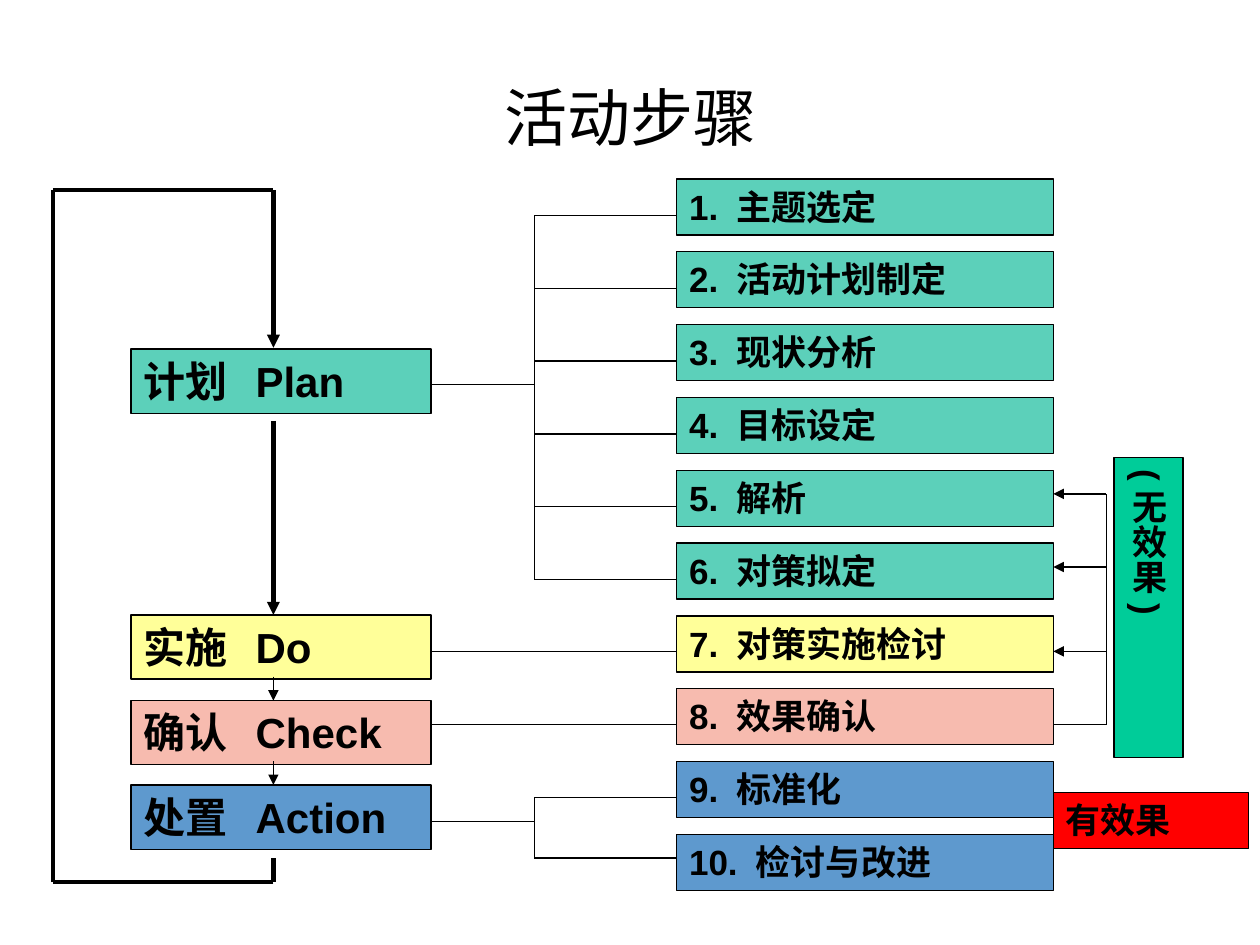
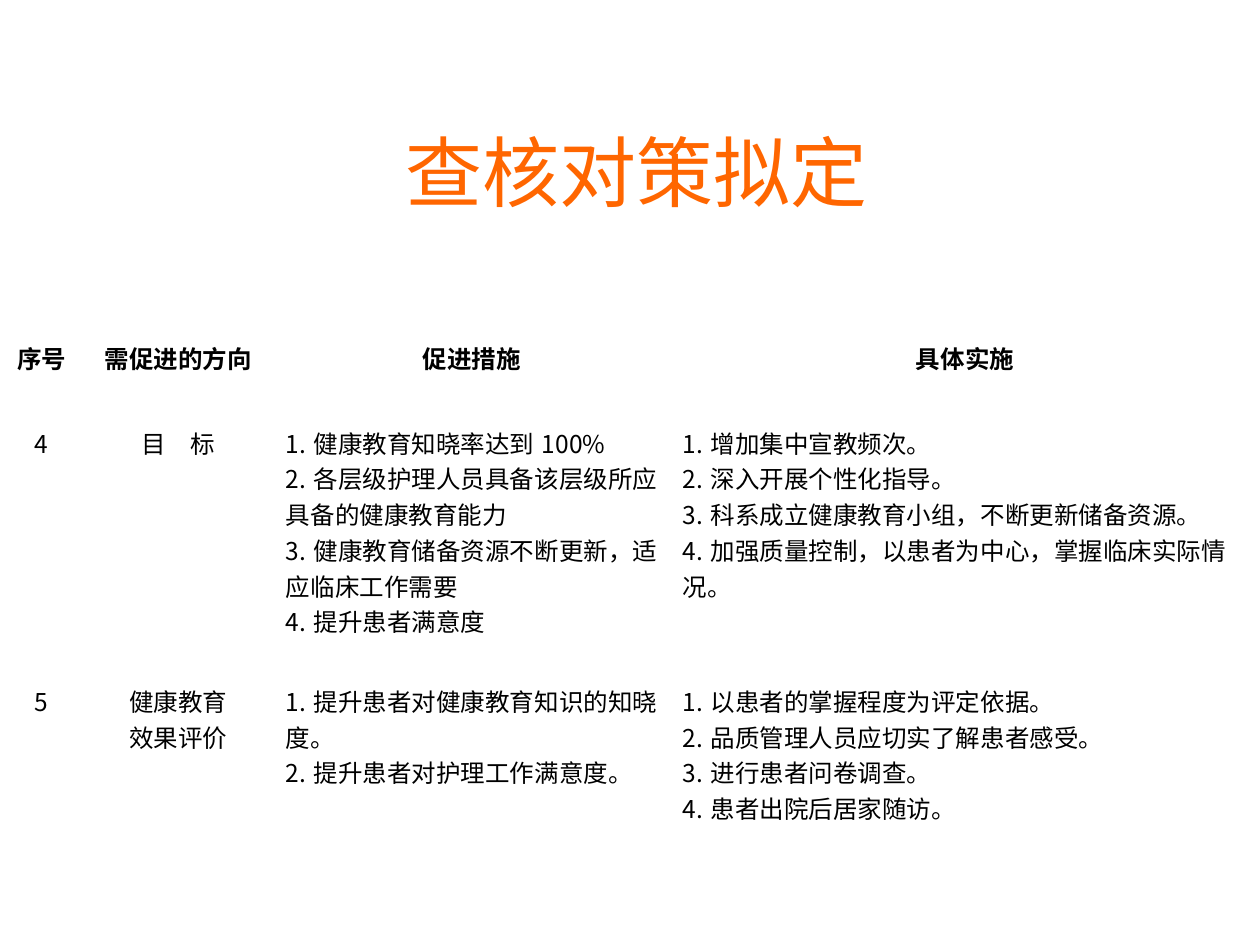
from lxml import etree
from pptx import Presentation
from pptx import util as u
from pptx.dml.color import RGBColor
from pptx.enum import shapes, text
from pptx.oxml.ns import qn

COLUMNS, ROWS = 100, 75

BLACK = RGBColor(0x00, 0x00, 0x00)
WHITE = RGBColor(0xFF, 0xFF, 0xFF)
ORANGE = RGBColor(0xFF, 0x66, 0x00)
TEAL = RGBColor(0x5C, 0xD0, 0xBA)
YELLOW = RGBColor(0xFF, 0xFF, 0x99)
PINK = RGBColor(0xF7, 0xBB, 0xAF)
BLUE = RGBColor(0x5E, 0x99, 0xCE)
GREEN = RGBColor(0x00, 0xCC, 0x99)
RED = RGBColor(0xFF, 0x00, 0x00)

LATIN, SERIF, CHINESE = "Arial", "Times New Roman", "Noto Sans CJK SC"
THIN, THICK = 0.75, 2.5

# name, fill, top row, row of its outgoing line
PHASES = [
    ("计划\tPlan", TEAL, 27.7, 30.5),
    ("实施\tDo", YELLOW, 48.8, 51.7),
    ("确认\tCheck", PINK, 55.6, 57.5),
    ("处置\tAction", BLUE, 62.3, 65.2),
]
STEPS = [
    ("主题选定", TEAL), ("活动计划制定", TEAL), ("现状分析", TEAL),
    ("目标设定", TEAL), ("解析", TEAL), ("对策拟定", TEAL),
    ("对策实施检讨", YELLOW), ("效果确认", PINK),
    ("标准化", BLUE), ("检讨与改进", BLUE),
]
MEASURES = [
    ["序号", "需促进的方向", "促进措施", "具体实施"],
    ["4", "目　标",
     "1.健康教育知晓率达到100%\n2.各层级护理人员具备该层级所应具备的健康教育能力\n"
     "3.健康教育储备资源不断更新，适应临床工作需要\n4.提升患者满意度",
     "1.增加集中宣教频次。\n2.深入开展个性化指导。\n"
     "3.科系成立健康教育小组，不断更新储备资源。\n"
     "4.加强质量控制，以患者为中心，掌握临床实际情况。"],
    ["5", "健康教育\n效果评价",
     "1.提升患者对健康教育知识的知晓度。\n2.提升患者对护理工作满意度。",
     "1.以患者的掌握程度为评定依据。\n2.品质管理人员应切实了解患者感受。\n"
     "3.进行患者问卷调查。\n4.患者出院后居家随访。"],
]


class Deck:
    """Holds the style and the current slide; lengths are grid columns and rows."""

    def __init__(self):
        self.presentation = Presentation()
        self.presentation.slide_width = u.Inches(10)
        self.presentation.slide_height = u.Inches(7.5)
        self.slide = None

    def x(self, columns):
        return round(self.presentation.slide_width * columns / COLUMNS)

    def y(self, rows):
        return round(self.presentation.slide_height * rows / ROWS)

    def area(self, left, top, width, height):
        return self.x(left), self.y(top), self.x(width), self.y(height)

    def fill_text(self, frame, words, size, font=LATIN, color=BLACK, bold=False,
                  align=text.PP_ALIGN.LEFT, tab=None):
        frame.text = words
        frame.word_wrap = True
        for paragraph in frame.paragraphs:
            paragraph.alignment = align
            properties = paragraph._p.get_or_add_pPr()
            if tab:
                tabs = etree.SubElement(properties, qn("a:tabLst"))
                etree.SubElement(tabs, qn("a:tab"), pos=str(self.x(tab)), algn="l")
            paragraph.font.size = u.Pt(size)
            paragraph.font.bold = bold
            paragraph.font.color.rgb = color
            paragraph.font.name = font
            etree.SubElement(properties.find(qn("a:defRPr")), qn("a:ea"),
                             typeface=CHINESE)

    def add_slide(self, title, area, size, font, color):
        self.slide = self.presentation.slides.add_slide(
            self.presentation.slide_layouts[5])
        shape = self.slide.shapes.title
        shape.left, shape.top, shape.width, shape.height = self.area(*area)
        shape.text_frame.vertical_anchor = text.MSO_ANCHOR.MIDDLE
        self.fill_text(shape.text_frame, title, size, font, color,
                       align=text.PP_ALIGN.CENTER)

    def box(self, words, area, fill, size=20, tab=None, vertical=False):
        shape = self.slide.shapes.add_shape(
            shapes.MSO_SHAPE.RECTANGLE, *self.area(*area))
        shape.shadow.inherit = False
        shape.fill.solid()
        shape.fill.fore_color.rgb = fill
        shape.line.color.rgb = BLACK
        shape.line.width = u.Pt(THIN)
        frame = shape.text_frame
        frame.vertical_anchor = text.MSO_ANCHOR.TOP
        if vertical:
            frame.vertical_anchor = text.MSO_ANCHOR.MIDDLE
            frame._txBody.bodyPr.set("vert", "eaVert")
        self.fill_text(frame, words, size, bold=True, tab=tab)

    def polyline(self, *points, width=THIN, arrow=False):
        """Join the points with straight lines; an arrowhead goes on the last."""
        for start, end in zip(points, points[1:]):
            connector = self.slide.shapes.add_connector(
                shapes.MSO_CONNECTOR.STRAIGHT, self.x(start[0]), self.y(start[1]),
                self.x(end[0]), self.y(end[1]))
            connector.line.color.rgb = BLACK
            connector.line.width = u.Pt(width)
            properties = connector._element.spPr
            if arrow and end == points[-1]:
                etree.SubElement(properties.find(qn("a:ln")), qn("a:tailEnd"),
                                 type="triangle")
            etree.SubElement(properties, qn("a:effectLst"))

    def table(self, rows, area, widths, heights, size):
        table = self.slide.shapes.add_table(
            len(rows), len(widths), *self.area(*area)).table
        table.horz_banding = False
        for column, width in zip(table.columns, widths):
            column.width = self.x(width)
        for row, height in zip(table.rows, heights):
            row.height = self.y(height)
        for i, row in enumerate(rows):
            for j, words in enumerate(row):
                cell = table.cell(i, j)
                cell.fill.solid()
                cell.fill.fore_color.rgb = WHITE
                centred = i == 0 or j < 2
                align = text.PP_ALIGN.CENTER if centred else text.PP_ALIGN.LEFT
                self.fill_text(cell.text_frame, words, size, CHINESE,
                               bold=i == 0, align=align)


def add_activity_steps(deck):
    deck.add_slide("活动步骤", (5, 3, 90, 12.4), 36, SERIF, BLACK)
    phase_left, phase_width = 10.4, 23.8
    step_left, step_width, step_top, step_pitch = 53.7, 29.9, 14.2, 5.78
    phase_right, step_right = phase_left + phase_width, step_left + step_width
    trunk, cycle, loop, feedback = 42.4, 21.7, 4.2, 87.8

    for name, fill, top, _ in PHASES:
        deck.box(name, (phase_left, top, phase_width, 5.1), fill, 24, tab=8.9)
    for i, (name, fill) in enumerate(STEPS):
        top = step_top + i * step_pitch
        deck.box(f"{i + 1}. {name}", (step_left, top, step_width, 4.45), fill)

    plan, do, check, action = (line for *_, line in PHASES)
    plan_steps = [17.1 + i * step_pitch for i in range(6)]
    for row, branches in ((plan, plan_steps), (action, [63.3, 68.1])):
        deck.polyline((phase_right, row), (trunk, row))
        deck.polyline((trunk, branches[0]), (trunk, branches[-1]))
        for branch in branches:
            deck.polyline((trunk, branch), (step_left, branch))
    for row in (do, check):
        deck.polyline((phase_right, row), (step_left, row))

    deck.polyline((cycle, 68.1), (cycle, 70), (loop, 70), (loop, 15.1),
                  (cycle, 15.1), (cycle, 27.6), width=THICK, arrow=True)
    deck.polyline((cycle, 33.4), (cycle, 48.8), width=THICK, arrow=True)
    for top in (55.6, 62.3):
        deck.polyline((cycle, top - 1.9), (cycle, top), arrow=True)

    deck.polyline((step_right, check), (feedback, check), (feedback, 39.2))
    for row in (39.2, 45, do):
        deck.polyline((feedback, row), (step_right, row), arrow=True)
    deck.box("(无效果)", (88.4, 36.3, 5.5, 23.8), GREEN, vertical=True)
    deck.box("有效果", (step_right, 62.9, 15.5, 4.45), RED)


def add_measures(deck):
    deck.add_slide("查核对策拟定", (8.3, 7.6, 84.4, 11.9), 44, CHINESE, ORANGE)
    deck.table(MEASURES, (0, 26.5, 100, 48.1), (6.6, 15.1, 31.5, 46.8),
               (6.7, 20.5, 20.9), 14)


def main():
    deck = Deck()
    add_activity_steps(deck)
    add_measures(deck)
    deck.presentation.save("out.pptx")


if __name__ == "__main__":
    main()
